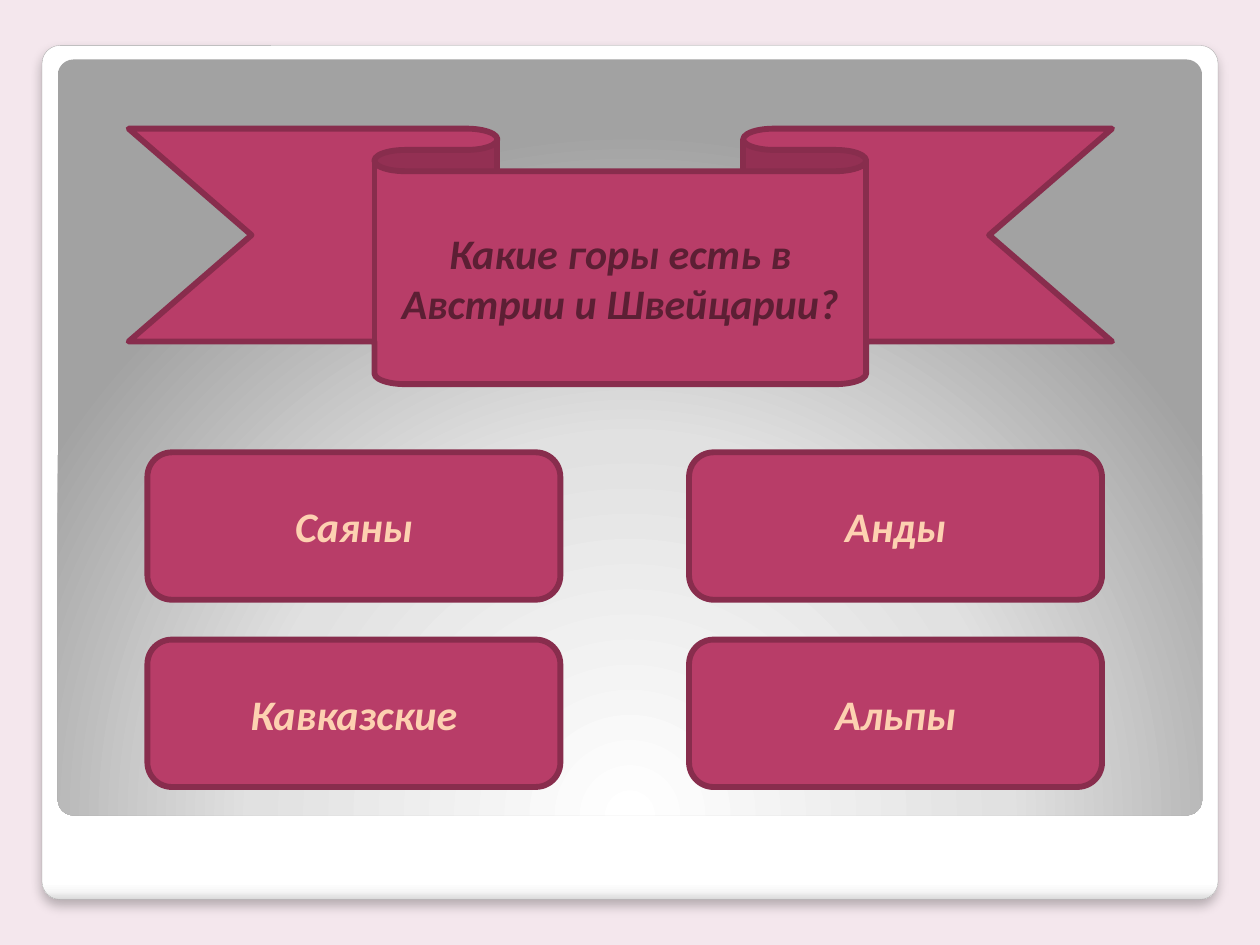
"""Build a geography quiz slide with a question ribbon and four answers."""
from dataclasses import dataclass

from lxml import etree
from pptx import Presentation
from pptx.dml.color import RGBColor
from pptx.enum.shapes import MSO_SHAPE
from pptx.enum.text import MSO_ANCHOR, MSO_AUTO_SIZE, PP_ALIGN
from pptx.oxml.ns import qn
from pptx.util import Pt

ROUNDED = MSO_SHAPE.ROUNDED_RECTANGLE
RIBBON = MSO_SHAPE.DOWN_RIBBON
MIDDLE = MSO_ANCHOR.MIDDLE
CENTER = PP_ALIGN.CENTER
NO_FIT = MSO_AUTO_SIZE.NONE
TITLE_ONLY = 5

COLORS = {
    "background": "F4E7ED",
    "card_line": "A4A4A4",
    "shadow": "000000",
    "berry": "B83D68",
    "berry_line": "882D4D",
    "question": "5C1F34",
    "answer": "FDD1B1",
}
CARD_STOPS = ((0, "FFFFFF"), (98, "FFFFFF"), (99, "F7F7F7"), (100, "DADADA"))
PANEL_STOPS = ((0, "FFFFFF"), (55, "E1E1E1"), (100, "A2A2A2"))
FONT = {"name": "Calibri", "size": Pt(24), "bold": True, "italic": True}
FRAME = {"word_wrap": True, "auto_size": NO_FIT, "vertical_anchor": MIDDLE}

QUESTION = "Какие горы есть в Австрии и Швейцарии?"
ANSWERS = (("Саяны", "Анды"), ("Кавказские", "Альпы"))


@dataclass(frozen=True)
class Box:
    left: float
    top: float
    width: float
    height: float

    def lengths(self) -> tuple:
        return tuple(Pt(v) for v in (self.left, self.top, self.width, self.height))


CARD = Box(24, 26, 672, 488)
PANEL = Box(33, 34, 654, 432)
BANNER = Box(73.5, 73.5, 562, 146)
QUESTION_BOX = Box(214, 98, 281, 121.5)
FIRST_ANSWER = Box(84.25, 258.5, 236, 84.25)
COLUMN_STEP, ROW_STEP = 309.5, 107


def rgb(name: str) -> RGBColor:
    return RGBColor.from_string(COLORS[name])


def add_box(s, kind, box: Box, line: str = "", width: float = 0):
    sp = s.shapes.add_shape(kind, *box.lengths())
    sp.shadow.inherit = False
    if line:
        sp.line.color.rgb = rgb(line)
        sp.line.width = Pt(width)
    else:
        sp.line.fill.background()
    return sp


def add_berry(s, kind, box: Box):
    sp = add_box(s, kind, box, "berry_line", 3.35)
    sp.fill.solid()
    sp.fill.fore_color.rgb = rgb("berry")
    return sp


def add_color(parent, value: str):
    return etree.SubElement(parent, qn("a:srgbClr"), val=value)


def set_gradient(sp, stops: tuple):
    sp.fill.background()
    spPr = sp.element.spPr
    grad = etree.Element(qn("a:gradFill"), rotWithShape="1")
    stop_list = etree.SubElement(grad, qn("a:gsLst"))
    for position, value in stops:
        stop = etree.SubElement(stop_list, qn("a:gs"), pos=str(position * 1000))
        add_color(stop, value)
    spPr.replace(spPr.find(qn("a:noFill")), grad)
    return grad


def add_shadow(sp) -> None:
    effects = sp.element.spPr.find(qn("a:effectLst"))
    shadow = etree.SubElement(effects, qn("a:outerShdw"), blurRad=str(Pt(6)),
                              dist=str(Pt(4)), dir="5400000", rotWithShape="0")
    color = add_color(shadow, COLORS["shadow"])
    etree.SubElement(color, qn("a:alpha"), val="25000")


def set_text(sp, text: str, color: str) -> None:
    tf = sp.text_frame
    for name, value in FRAME.items():
        setattr(tf, name, value)
    p = tf.paragraphs[0]
    p.alignment = CENTER
    r = p.add_run()
    r.text = text
    for name, value in FONT.items():
        setattr(r.font, name, value)
    r.font.color.rgb = rgb(color)


def add_backdrop(s) -> None:
    card = add_box(s, ROUNDED, CARD, "card_line", 0.16)
    linear = set_gradient(card, CARD_STOPS)
    etree.SubElement(linear, qn("a:lin"), ang="5400000", scaled="0")
    add_shadow(card)
    panel = add_box(s, ROUNDED, PANEL)
    radial = etree.SubElement(set_gradient(panel, PANEL_STOPS), qn("a:path"), path="circle")
    etree.SubElement(radial, qn("a:fillToRect"), l="50000", t="175000", r="50000", b="-75000")
    for sp in (card, panel):
        sp.adjustments[0] = 0.021


def add_question(s) -> None:
    banner = add_berry(s, RIBBON, BANNER)
    title = s.shapes.title
    title.left, title.top, title.width, title.height = QUESTION_BOX.lengths()
    set_text(title, QUESTION, "question")
    banner.element.addnext(title.element)


def add_answers(s) -> None:
    first = FIRST_ANSWER
    for row, answers in enumerate(ANSWERS):
        for column, answer in enumerate(answers):
            box = Box(first.left + column * COLUMN_STEP, first.top + row * ROW_STEP,
                      first.width, first.height)
            set_text(add_berry(s, ROUNDED, box), answer, "answer")


def main() -> None:
    prs = Presentation()
    prs.slide_width, prs.slide_height = Pt(720), Pt(540)
    s = prs.slides.add_slide(prs.slide_layouts[TITLE_ONLY])
    s.background.fill.solid()
    s.background.fill.fore_color.rgb = rgb("background")
    add_backdrop(s)
    add_question(s)
    add_answers(s)
    prs.save("out.pptx")


if __name__ == "__main__":
    main()
